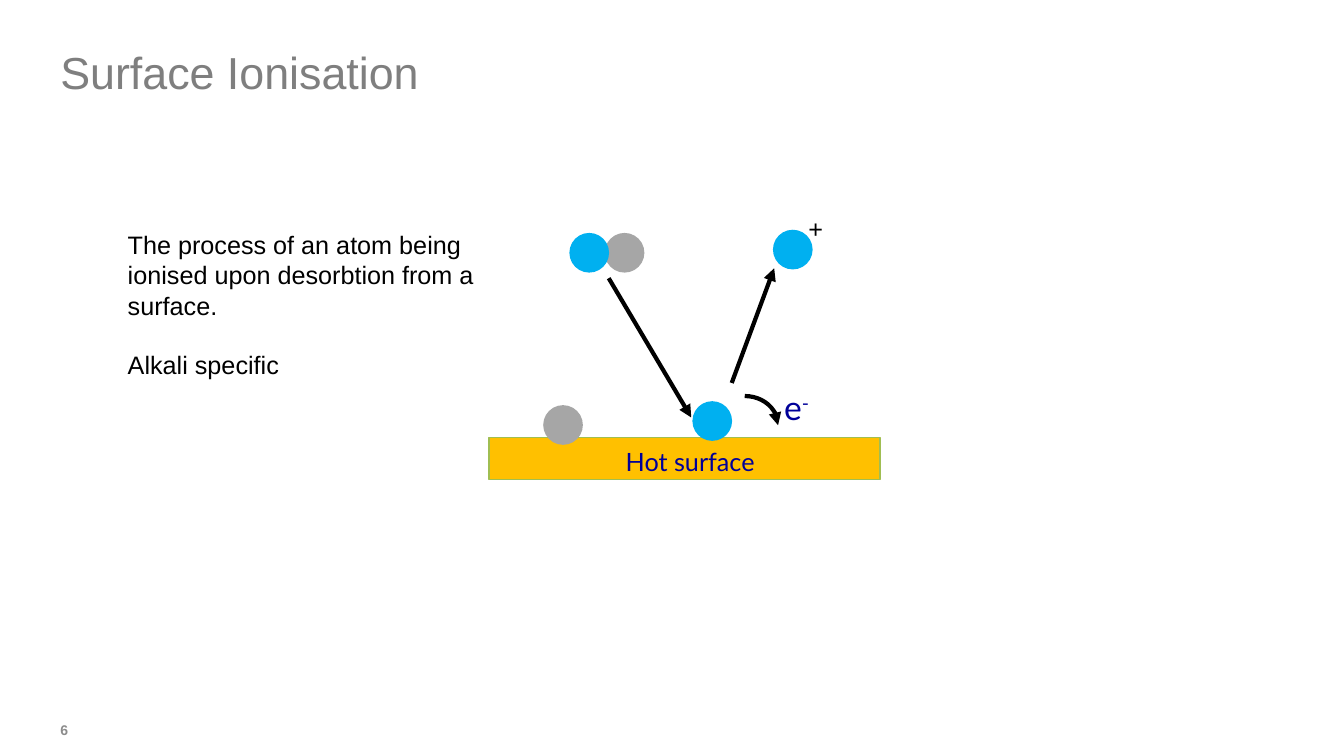
from typing import NamedTuple

from lxml.etree import SubElement
from pptx import Presentation
from pptx.dml.color import RGBColor
from pptx.enum.shapes import MSO_CONNECTOR as Connector, MSO_SHAPE as Shape
from pptx.enum.text import MSO_ANCHOR as Anchor
from pptx.oxml.ns import qn
from pptx.util import Cm, Pt

COLOURS = {
    "title": "7F7F7F", "number": "8C8C8C", "black": "000000", "navy": "000099",
    "alkali": "00B0F0", "partner": "A6A6A6", "surface": "FFC000", "edge": "A0BE52",
}
ATOM_SIZE = 1.0
ARROW_WIDTH = 3


class Label(NamedTuple):
    lines: list[str]
    left: float
    top: float
    width: float
    height: float
    size: float
    colour: str = "black"
    font: str = "Arial"
    bold: bool = False
    wrap: bool = False
    inset: float = 0.25
    anchor: Anchor = Anchor.TOP


class Atom(NamedTuple):
    left: float
    top: float
    colour: str


class Path(NamedTuple):
    x1: float
    y1: float
    x2: float
    y2: float


def rgb(name: str) -> RGBColor:
    return RGBColor.from_string(COLOURS[name])


def draw_label(shapes, label: Label):
    box = shapes.add_textbox(Cm(label.left), Cm(label.top), Cm(label.width), Cm(label.height))
    frame = box.text_frame
    frame.word_wrap = label.wrap
    frame.vertical_anchor = label.anchor
    frame.margin_left = frame.margin_right = Cm(label.inset)
    frame.text = "\n".join(label.lines)
    for paragraph in frame.paragraphs:
        for run in paragraph.runs:
            style_run(run, label)
    return frame


def style_run(run, label: Label) -> None:
    run.font.name = label.font
    run.font.size = Pt(label.size)
    run.font.bold = label.bold
    run.font.color.rgb = rgb(label.colour)


def draw_atom(shapes, atom: Atom) -> None:
    ball = shapes.add_shape(Shape.OVAL, Cm(atom.left), Cm(atom.top), Cm(ATOM_SIZE), Cm(ATOM_SIZE))
    ball.shadow.inherit = False
    ball.fill.solid()
    ball.fill.fore_color.rgb = rgb(atom.colour)
    ball.line.fill.background()


def style_arrow(arrow) -> None:
    arrow.line.color.rgb = rgb("black")
    arrow.line.width = Pt(ARROW_WIDTH)
    SubElement(arrow.line._get_or_add_ln(), qn("a:tailEnd"), type="triangle")


def draw_path(shapes, route: Path) -> None:
    arrow = shapes.add_connector(Connector.STRAIGHT, Cm(route.x1), Cm(route.y1),
                                 Cm(route.x2), Cm(route.y2))
    style_arrow(arrow)
    SubElement(arrow._element.spPr, qn("a:effectLst"))


def main() -> None:
    presentation = Presentation()
    presentation.slide_width, presentation.slide_height = Cm(33.87), Cm(19.05)
    shapes = presentation.slides.add_slide(presentation.slide_layouts[6]).shapes

    # Title and slide number
    draw_label(shapes, Label(["Surface Ionisation"], 1.52, 1.12, 30.81, 1.37, 32, "title",
                             wrap=True, inset=0, anchor=Anchor.MIDDLE))
    draw_label(shapes, Label(["6"], 1.52, 18.06, 0.43, 0.69, 10, "number",
                             bold=True, inset=0, anchor=Anchor.MIDDLE))

    # Hot surface
    surface = shapes.add_shape(Shape.RECTANGLE, Cm(12.32), Cm(11.02), Cm(9.86), Cm(1.07))
    surface.shadow.inherit = False
    surface.fill.solid()
    surface.fill.fore_color.rgb = rgb("surface")
    surface.line.color.rgb = rgb("edge")
    surface.line.width = Pt(1)
    draw_label(shapes, Label(["Hot surface"], 15.52, 11.13, 6.38, 0.86, 18, "navy", "Lato",
                             wrap=True))

    # Paths of the departing ion and the arriving molecule
    for route in (Path(18.44, 9.65, 19.51, 6.76), Path(15.34, 7.01, 17.42, 10.52)):
        draw_path(shapes, route)

    # Electron passing into the surface
    electron_path = shapes.add_shape(Shape.ARC, Cm(17.93), Cm(9.98), Cm(1.68), Cm(1.47))
    electron_path.shadow.inherit = False
    electron_path.fill.background()
    style_arrow(electron_path)
    electron = Label(["e"], 19.51, 9.63, 2.13, 1.07, 24, "navy", "Lato", wrap=True)
    charge = draw_label(shapes, electron).paragraphs[0].add_run()
    charge.text = "-"
    style_run(charge, electron)
    charge.font._element.set("baseline", "30000")

    # Explanation
    explanation = draw_label(shapes, Label(
        ["The process of an atom being", "ionised upon desorbtion from a", "surface.",
         "Alkali specific"], 2.97, 5.66, 9.32, 4.11, 18))
    explanation.paragraphs[-1].space_before = Pt(21)

    # Arriving molecule
    molecule = shapes.add_group_shape().shapes
    for atom in (Atom(15.24, 5.87, "partner"), Atom(14.35, 5.87, "alkali")):
        draw_atom(molecule, atom)

    # Atoms on the surface and the departing ion
    for atom in (Atom(13.69, 10.21, "partner"), Atom(17.45, 10.11, "alkali"),
                 Atom(19.48, 5.79, "alkali")):
        draw_atom(shapes, atom)
    draw_label(shapes, Label(["+"], 20.12, 5.26, 0.89, 1.02, 18))

    presentation.save("out.pptx")


if __name__ == "__main__":
    main()
